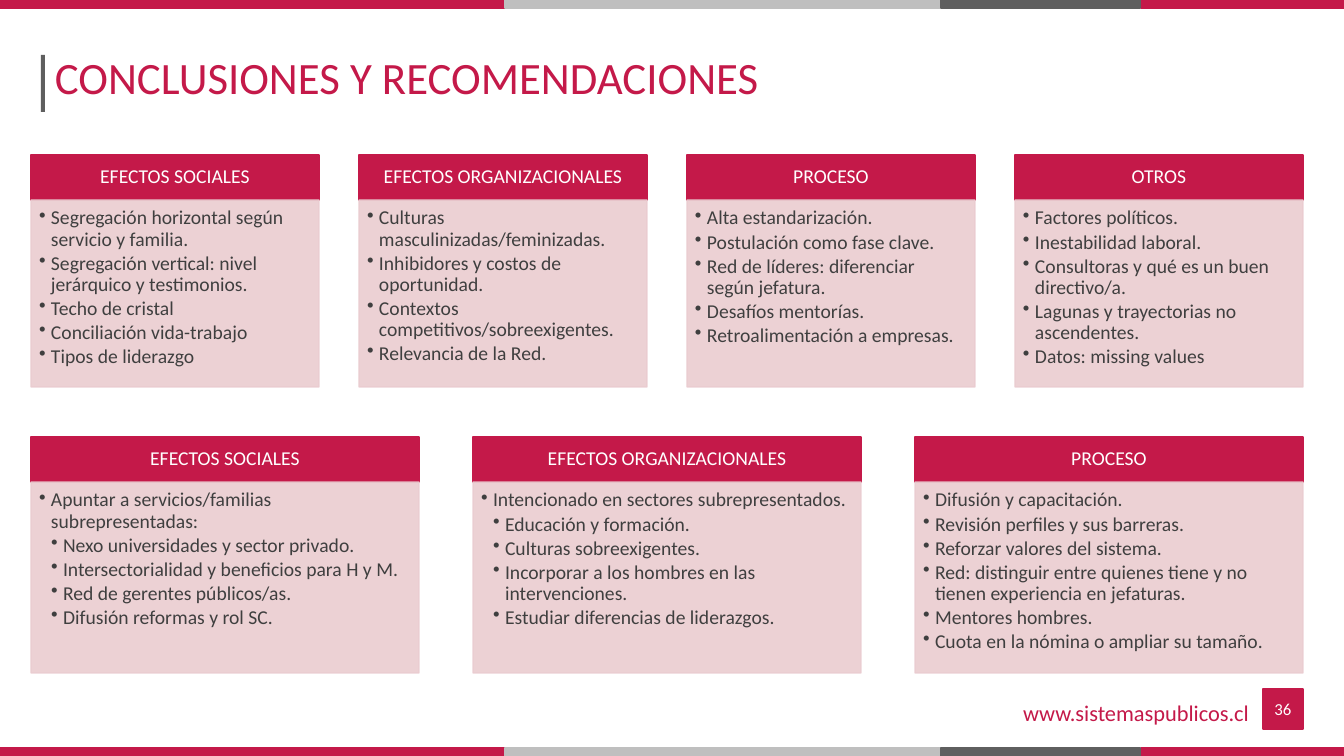
from lxml import etree
from pptx import Presentation
from pptx import util as u
from pptx.dml.color import RGBColor
from pptx.enum import shapes, text
from pptx.oxml.ns import qn

CRIMSON = RGBColor(0xC4, 0x19, 0x49)
SILVER = RGBColor(0xBF, 0xBF, 0xBF)
GREY = RGBColor(0x5F, 0x5F, 0x5F)
PINK = RGBColor(0xEA, 0xCC, 0xD0)
INK = RGBColor(0x3F, 0x3F, 0x3F)
WHITE = RGBColor(0xFF, 0xFF, 0xFF)
FONT = "Calibri"
INCH = 100.8
INDENT = 12

CONCLUSIONES = [
    ("EFECTOS SOCIALES", [
        (1, "Segregación horizontal según servicio y familia."),
        (1, "Segregación vertical: nivel jerárquico y testimonios."),
        (1, "Techo de cristal"),
        (1, "Conciliación vida-trabajo"),
        (1, "Tipos de liderazgo")]),
    ("EFECTOS ORGANIZACIONALES", [
        (1, "Culturas masculinizadas/feminizadas."),
        (1, "Inhibidores y costos de oportunidad."),
        (1, "Contextos competitivos/sobreexigentes."),
        (1, "Relevancia de la Red.")]),
    ("PROCESO", [
        (1, "Alta estandarización."),
        (1, "Postulación como fase clave."),
        (1, "Red de líderes: diferenciar según jefatura."),
        (1, "Desafíos mentorías."),
        (1, "Retroalimentación a empresas.")]),
    ("OTROS", [
        (1, "Factores políticos."),
        (1, "Inestabilidad laboral."),
        (1, "Consultoras y qué es un buen directivo/a."),
        (1, "Lagunas y trayectorias no ascendentes."),
        (1, "Datos: missing values")]),
]
RECOMENDACIONES = [
    ("EFECTOS SOCIALES", [
        (1, "Apuntar a servicios/familias subrepresentadas:"),
        (2, "Nexo universidades y sector privado."),
        (2, "Intersectorialidad y beneficios para H y M."),
        (2, "Red de gerentes públicos/as."),
        (2, "Difusión reformas y rol SC.")]),
    ("EFECTOS ORGANIZACIONALES", [
        (1, "Intencionado en sectores subrepresentados."),
        (2, "Educación y formación."),
        (2, "Culturas sobreexigentes."),
        (2, "Incorporar a los hombres en las intervenciones."),
        (2, "Estudiar diferencias de liderazgos.")]),
    ("PROCESO", [
        (1, "Difusión y capacitación."),
        (1, "Revisión perfiles y sus barreras."),
        (1, "Reforzar valores del sistema."),
        (1, "Red: distinguir entre quienes tiene y no tienen experiencia en jefaturas."),
        (1, "Mentores hombres."),
        (1, "Cuota en la nómina o ampliar su tamaño.")]),
]


def px(n):
    """Turn slide pixels into EMU."""
    return u.Inches(n / INCH)


def add_rect(s, x, y, w, h, color, outlined=True, alpha=None):
    """Add a flat rectangle, optionally outlined and translucent."""
    sp = s.shapes.add_shape(shapes.MSO_SHAPE.RECTANGLE, px(x), px(y), px(w), px(h))
    sp.shadow.inherit = False
    sp.fill.solid()
    sp.fill.fore_color.rgb = color
    if outlined:
        sp.line.color.rgb = color
        sp.line.width = u.Pt(1)
    else:
        sp.line.fill.background()
    if alpha:
        for clr in sp._element.spPr.iter(qn("a:srgbClr")):
            etree.SubElement(clr, qn("a:alpha")).set("val", str(alpha * 1000))
    return sp


def set_frame(sp, anchor, insets=(10, 5, 10, 5)):
    """Set wrapping, anchor and insets, and return the text frame."""
    tf = sp.text_frame
    tf.word_wrap = True
    tf.vertical_anchor = anchor
    tf.margin_left, tf.margin_top, tf.margin_right, tf.margin_bottom = map(px, insets)
    return tf


def write(p, words, size, color, align, spacing=1.0):
    """Write one run into a paragraph."""
    p.alignment = align
    p.line_spacing = spacing
    r = p.add_run()
    r.text = words
    r.font.name = FONT
    r.font.size = u.Pt(size)
    r.font.color.rgb = color


def add_label(s, x, y, w, h, words, size, align, spacing=1.0,
              anchor=text.MSO_ANCHOR.MIDDLE):
    """Add a one-line crimson text box."""
    tf = set_frame(s.shapes.add_textbox(px(x), px(y), px(w), px(h)), anchor)
    write(tf.paragraphs[0], words, size, CRIMSON, align, spacing)


def add_band(s, x, y, w, h):
    """Add the striped band of a slide edge."""
    add_rect(s, x, y, w, h, CRIMSON)
    add_rect(s, x + 505, y, 635, h, SILVER)
    add_rect(s, x + 941, y, 199, h, GREY)


def add_heading(s, x, y, w, h, words):
    """Add the slide title with its upright rule."""
    add_rect(s, x - 4, y + 13, 4, 57, GREY, outlined=False)
    add_label(s, x, y, w, h, words, 32, text.PP_ALIGN.LEFT, 1.5)


def add_card(s, x, y, w, h, heading, items):
    """Add a heading bar above a bulleted panel."""
    bar = 45
    tf = set_frame(add_rect(s, x, y, w, bar, CRIMSON),
                   text.MSO_ANCHOR.MIDDLE, (11, 6, 11, 6))
    write(tf.paragraphs[0], heading, 14, WHITE, text.PP_ALIGN.CENTER, 0.9)
    tf = set_frame(add_rect(s, x, y + bar, w, h - bar, PINK, alpha=90),
                   text.MSO_ANCHOR.TOP, (8, 8, 11, 12))
    for i, (level, words) in enumerate(items):
        p = tf.add_paragraph() if i else tf.paragraphs[0]
        p.level = level
        pPr = p._p.get_or_add_pPr()
        pPr.set("marL", str(px(INDENT * level)))
        pPr.set("indent", str(-px(INDENT)))
        etree.SubElement(pPr, qn("a:buChar")).set("char", "•")
        p.space_after = u.Pt(2.1)
        write(p, words, 14, INK, text.PP_ALIGN.LEFT, 0.9)


def add_card_row(s, x, y, w, h, card_w, cards):
    """Spread cards evenly across a row."""
    pitch = (w - card_w) / (len(cards) - 1)
    for i, (heading, items) in enumerate(cards):
        add_card(s, x + i * pitch, y, card_w, h, heading, items)


def add_footer(s, x, y, w, h, site, number):
    """Add the web address and the page number tile."""
    add_label(s, x, y + 5, w - h - 4, 34, site, 16, text.PP_ALIGN.RIGHT,
              anchor=text.MSO_ANCHOR.TOP)
    tile = add_rect(s, x + w - h, y, h, h, CRIMSON)
    tf = set_frame(tile, text.MSO_ANCHOR.MIDDLE)
    write(tf.paragraphs[0], number, 12, WHITE, text.PP_ALIGN.CENTER)


def main():
    """Build the slide and save it."""
    prs = Presentation()
    prs.slide_width, prs.slide_height = px(1344), px(756)
    s = prs.slides.add_slide(prs.slide_layouts[6])
    for y in (0, 748):
        add_band(s, 0, y, 1344, 8)
    add_heading(s, 45, 42, 1080, 43, "CONCLUSIONES Y RECOMENDACIONES")
    add_card_row(s, 31, 155, 1272, 232, 288, CONCLUSIONES)
    add_card_row(s, 31, 437, 1272, 236, 388, RECOMENDACIONES)
    add_footer(s, 979, 689, 324, 40, "www.sistemaspublicos.cl", "36")
    prs.save("out.pptx")


if __name__ == "__main__":
    main()
